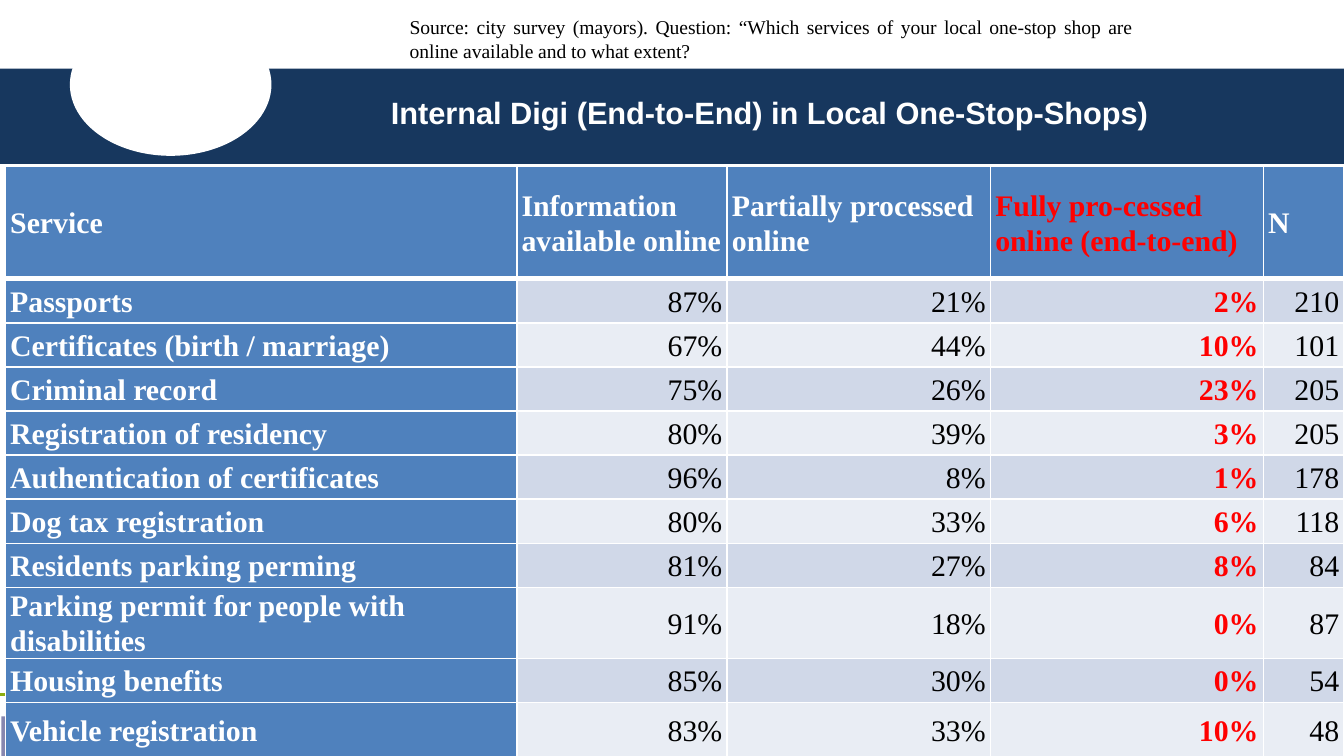
from lxml.etree import SubElement
from pptx import Presentation
from pptx.dml.color import RGBColor
from pptx.enum.shapes import MSO_CONNECTOR, MSO_SHAPE
from pptx.enum.text import MSO_ANCHOR, PP_ALIGN
from pptx.oxml.ns import qn
from pptx.util import Inches, Pt

RECT, OVAL = MSO_SHAPE.RECTANGLE, MSO_SHAPE.OVAL
STRAIGHT = MSO_CONNECTOR.STRAIGHT
MIDDLE = MSO_ANCHOR.MIDDLE
LEFT, RIGHT, JUSTIFY = PP_ALIGN.LEFT, PP_ALIGN.RIGHT, PP_ALIGN.JUSTIFY

WHITE = RGBColor(0xFF, 0xFF, 0xFF)
BLACK = RGBColor(0, 0, 0)
RED = RGBColor(0xFF, 0, 0)
NAVY = RGBColor(0x17, 0x37, 0x5E)
BLUE = RGBColor(0x4F, 0x81, 0xBD)
LILAC = RGBColor(0x87, 0x87, 0xAF)
GREEN = RGBColor(0x8D, 0xAE, 0x10)
BANDS = RGBColor(0xD0, 0xD8, 0xE8), RGBColor(0xE9, 0xED, 0xF4)

SERIF, SANS = "Times New Roman", "Arial"
WIDE, HIGH = 100, 56.25
COLS = 38.05, 15.65, 19.6, 20.3, 6
ROWS = [8.35] + [3.28] * 7 + [5, 3.28, 4.2]
KEY = 3

HEAD = (
    "Service",
    "Information available online",
    "Partially processed online",
    "Fully pro-cessed online (end-to-end)",
    "N",
)
DATA = (
    ("Passports", "87%", "21%", "2%", "210"),
    ("Certificates (birth / marriage)", "67%", "44%", "10%", "101"),
    ("Criminal record", "75%", "26%", "23%", "205"),
    ("Registration of residency", "80%", "39%", "3%", "205"),
    ("Authentication of certificates", "96%", "8%", "1%", "178"),
    ("Dog tax registration", "80%", "33%", "6%", "118"),
    ("Residents parking perming", "81%", "27%", "8%", "84"),
    ("Parking permit for people with disabilities", "91%", "18%", "0%", "87"),
    ("Housing benefits", "85%", "30%", "0%", "54"),
    ("Vehicle registration", "83%", "33%", "10%", "48"),
)


def grid(*units):
    """Turn grid units, a hundred to the slide's width, into lengths."""
    return [Inches(unit / 10) for unit in units]


def style(para, face, size, color, bold=False, align=LEFT):
    """Set the look of one paragraph."""
    para.alignment = align
    font = para.font
    font.name, font.size, font.bold = face, Pt(size), bold
    font.color.rgb = color


def add_form(slide, kind, box, color):
    """Add a plain filled shape."""
    form = slide.shapes.add_shape(kind, *grid(*box))
    form.shadow.inherit = False
    form.fill.solid()
    form.fill.fore_color.rgb = color
    form.line.fill.background()


def add_rule(slide, row, color):
    """Add a line across the slide."""
    rule = slide.shapes.add_connector(STRAIGHT, *grid(0, row, WIDE, row))
    rule.line.color.rgb = color
    rule.line.width = Pt(1.5)
    SubElement(rule._element.spPr, qn("a:effectLst"))


def add_text(slide, box, text, *look):
    """Add a wrapped text box with one paragraph."""
    frame = slide.shapes.add_textbox(*grid(*box)).text_frame
    frame.word_wrap = True
    frame.text = text
    style(frame.paragraphs[0], *look)


def add_edges(cell, top, base):
    """Draw white borders round a cell."""
    props = cell._tc.get_or_add_tcPr()
    for side, width in zip("LRTB", (1, 1, top, base)):
        edge = SubElement(props, qn(f"a:ln{side}"), w=str(Pt(width)))
        fill = SubElement(edge, qn("a:solidFill"))
        SubElement(fill, qn("a:srgbClr"), val=str(WHITE))


def fill_cell(cell, text, row, col):
    """Write and colour a cell by its place in the table."""
    label = row == 0 or col == 0
    add_edges(cell, 3 if row == 1 else 1, 3 if row == 0 else 1)
    cell.fill.solid()
    cell.fill.fore_color.rgb = BLUE if label else BANDS[(row - 1) % 2]
    cell.vertical_anchor = MIDDLE
    cell.margin_left, cell.margin_right = grid(0.36, 0.36)
    cell.margin_top = cell.margin_bottom = 0
    cell.text = text
    para = cell.text_frame.paragraphs[0]
    para.line_spacing = 1.07
    color = RED if col == KEY else WHITE if label else BLACK
    style(para, SERIF, 16, color, label or col == KEY, LEFT if label else RIGHT)


def add_grid(slide, left, top):
    """Add the table of services."""
    box = grid(left, top, sum(COLS), sum(ROWS))
    table = slide.shapes.add_table(len(ROWS), len(COLS), *box).table
    for col, width in zip(table.columns, grid(*COLS)):
        col.width = width
    for row, height in zip(table.rows, grid(*ROWS)):
        row.height = height
    for row, texts in enumerate((HEAD, *DATA)):
        for col, text in enumerate(texts):
            fill_cell(table.cell(row, col), text, row, col)


def main():
    """Build the slide and save it."""
    deck = Presentation()
    deck.slide_width, deck.slide_height = grid(WIDE, HIGH)
    slide = deck.slides.add_slide(deck.slide_layouts[6])
    add_form(slide, RECT, (0, 5.1, WIDE, 7.1), NAVY)
    add_form(slide, OVAL, (5.2, 1, 15, 10.6), WHITE)
    add_form(slide, RECT, (0.1, 53.3, WIDE, 3), LILAC)
    add_rule(slide, 51.7, GREEN)
    add_grid(slide, 0.4, 12.4)
    add_text(
        slide,
        (29.5, 0.65, 55.8, 4.5),
        "Source: city survey (mayors). Question: “Which services of your local "
        "one-stop shop are online available and to what extent?",
        SERIF, 10.5, BLACK, False, JUSTIFY,
    )
    add_text(
        slide,
        (28.1, 6.5, 60.2, 3.8),
        "Internal Digi (End-to-End) in Local One-Stop-Shops)",
        SANS, 16.5, WHITE, True,
    )
    deck.save("out.pptx")


if __name__ == "__main__":
    main()
